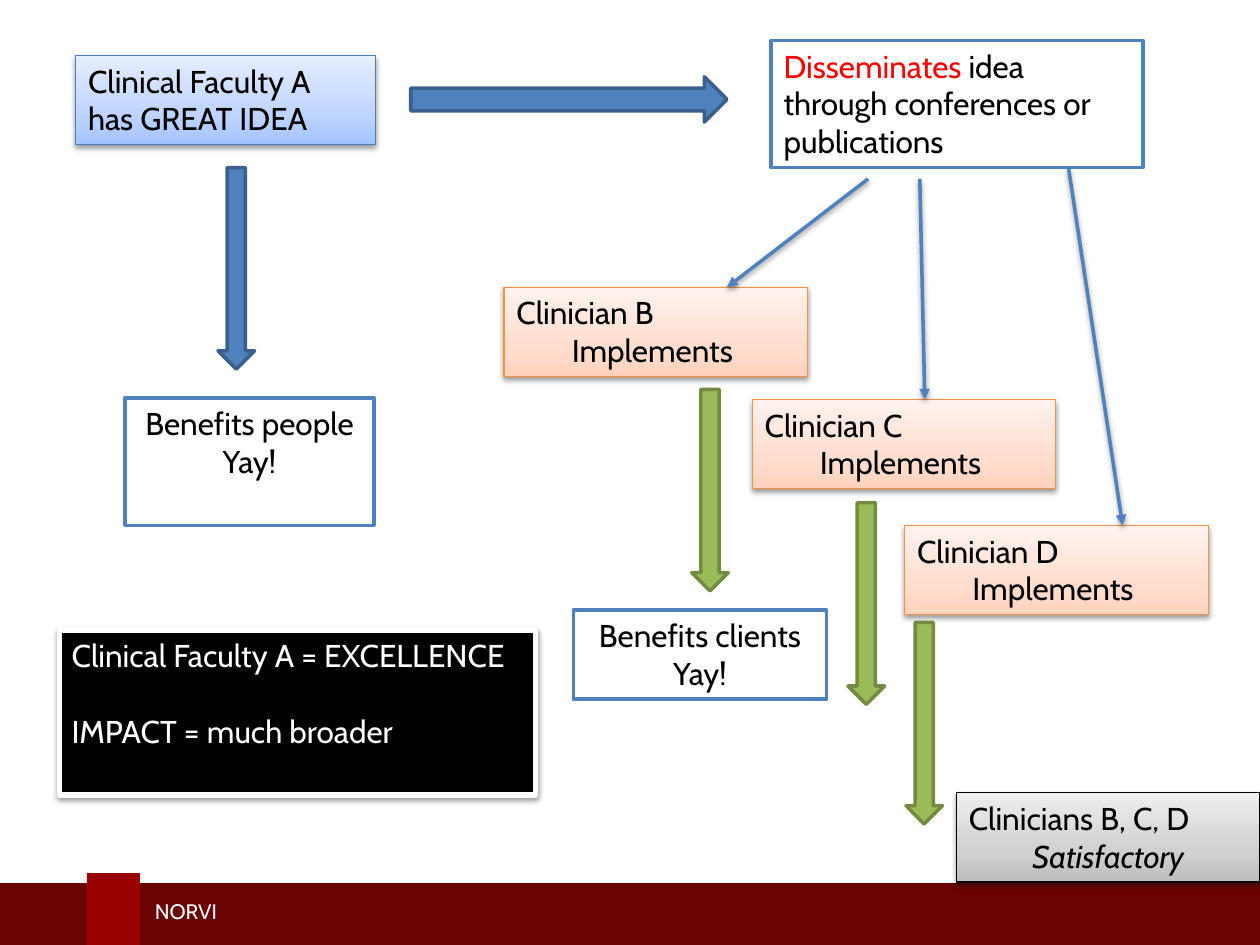
import pptx
import pptx.util
import pptx.dml.color
import pptx.enum.shapes
import pptx.enum.text
import pptx.oxml
import pptx.oxml.ns

Inches, Pt = pptx.util.Inches, pptx.util.Pt
RGB = pptx.dml.color.RGBColor
SHAPE = pptx.enum.shapes.MSO_SHAPE
ALIGN = pptx.enum.text.PP_ALIGN
ANCHOR = pptx.enum.text.MSO_ANCHOR
qn = pptx.oxml.ns.qn
NS = pptx.oxml.ns.nsdecls("a")

FONT = "Cabin"
BLACK, WHITE, RED = RGB(0, 0, 0), RGB(255, 255, 255), RGB(255, 0, 0)
BLUE, NAVY, SKY = RGB(0x4F, 0x81, 0xBD), RGB(0x3A, 0x5F, 0x8C), RGB(0x4B, 0x7E, 0xBC)
GREEN, OLIVE = RGB(0x9B, 0xBB, 0x59), RGB(0x73, 0x8A, 0x42)
ORANGE = RGB(0xF6, 0x92, 0x40)
MAROON, CRIMSON = RGB(0x69, 0x03, 0x04), RGB(0x99, 0, 0)
# Gradient colours from bottom to top
ICE = [RGB(0xA4, 0xC4, 0xFF), RGB(0xBF, 0xD4, 0xFF), RGB(0xE6, 0xEE, 0xFF)]
PEACH = [RGB(0xFF, 0xD2, 0xBD), RGB(0xFF, 0xDE, 0xD0), RGB(0xFF, 0xF2, 0xED)]
GREY = [RGB(0xBD, 0xBD, 0xBD), RGB(0xD1, 0xD1, 0xD1), RGB(0xEE, 0xEE, 0xEE)]


def shade(shape):
    """Give a shape or connector the soft shadow below it."""
    props = shape._element.spPr
    for old in props.findall(qn("a:effectLst")):
        props.remove(old)
    props.append(pptx.oxml.parse_xml(
        f'<a:effectLst {NS}><a:outerShdw blurRad="{Pt(3.1)}" dist="{Pt(1.6)}" '
        'dir="5400000" rotWithShape="0"><a:srgbClr val="000000">'
        '<a:alpha val="38000"/></a:srgbClr></a:outerShdw></a:effectLst>'))


def blend(shape, colors):
    """Fill a shape with a three-colour gradient rising from its base."""
    shape.fill.gradient()
    shape.fill.gradient_angle = 90
    stops = "".join(f'<a:gs pos="{pos}"><a:srgbClr val="{color}"/></a:gs>'
                    for pos, color in zip((0, 35000, 100000), colors))
    grad = shape._element.spPr.find(qn("a:gradFill"))
    grad.replace(grad.find(qn("a:gsLst")),
                 pptx.oxml.parse_xml(f"<a:gsLst {NS}>{stops}</a:gsLst>"))


def add_form(slide, kind, box, fill, line=None, width=2):
    form = slide.shapes.add_shape(kind, *map(Inches, box))
    form.shadow.inherit = False
    if isinstance(fill, list):
        blend(form, fill)
    else:
        form.fill.solid()
        form.fill.fore_color.rgb = fill
    if line is None:
        form.line.fill.background()
    else:
        form.line.color.rgb = line
        form.line.width = Pt(width)
    return form


def write(shape, lines, aligns, color=BLACK, size=18, anchor=ANCHOR.TOP):
    frame = shape.text_frame
    frame.word_wrap = True
    frame.vertical_anchor = anchor
    frame.text = "\n".join(lines)
    for para, align in zip(frame.paragraphs, aligns):
        para.alignment = align
        para.font.name = FONT
        para.font.size = Pt(size)
        para.font.color.rgb = color
    return frame.paragraphs


def add_card(slide, box, lines, fill, line, pad=0.1):
    """Place a shadowed gradient box, its second line centred."""
    card = add_form(slide, SHAPE.RECTANGLE, box, fill, line, 0.75)
    shade(card)
    card.text_frame.margin_right = Inches(pad)
    return write(card, lines, (ALIGN.LEFT, ALIGN.CENTER))


def add_frame(slide, box, lines, align=ALIGN.CENTER):
    """Place a white box with a blue outline."""
    frame = add_form(slide, SHAPE.RECTANGLE, box, WHITE, BLUE)
    return write(frame, lines, [align] * len(lines))


def add_link(slide, start, end):
    link = slide.shapes.add_connector(pptx.enum.shapes.MSO_CONNECTOR.STRAIGHT,
                                      *map(Inches, start + end))
    link.line.color.rgb = BLUE
    link.line.width = Pt(2)
    link.line._get_or_add_ln().append(
        pptx.oxml.parse_xml(f'<a:tailEnd {NS} type="triangle"/>'))
    shade(link)


def add_footer(slide, left, top):
    add_form(slide, SHAPE.RECTANGLE, (left, top, 10.09, 0.5), MAROON)
    add_form(slide, SHAPE.RECTANGLE, (left + 0.72, top - 0.08, 0.42, 0.58), CRIMSON)
    label = slide.shapes.add_textbox(
        *map(Inches, (left + 1.16, top + 0.07, 3.95, 0.3)))
    write(label, ["NORVI"], [ALIGN.LEFT], WHITE, 12, ANCHOR.MIDDLE)


def add_origin(slide, left, top):
    """Place the faculty idea and its direct benefit."""
    add_card(slide, (left, top, 2.38, 0.71),
             ["Clinical Faculty A has GREAT IDEA"], ICE, SKY, 0.15)
    add_form(slide, SHAPE.DOWN_ARROW, (left + 1.13, top + 0.89, 0.29, 1.6), BLUE, NAVY)
    add_frame(slide, (left + 0.39, top + 2.72, 1.98, 1.01), ["Benefits people", "Yay!"])
    add_form(slide, SHAPE.RIGHT_ARROW, (left + 2.66, top + 0.17, 2.51, 0.36), BLUE, NAVY)


def add_spread(slide, left, top):
    """Place the dissemination box and the clinicians it reaches."""
    para, = add_frame(slide, (left, top, 2.95, 1.01), ["Disseminates "], ALIGN.LEFT)
    para.runs[0].font.color.rgb = RED
    para.add_run().text = "idea through conferences or publications"

    # name, card, arrow and link start relative to the box; link end along the card
    steps = (("B", (-2.12, 1.96), (-0.63, 2.77), (0.77, 1.1), 1.77),
             ("C", (-0.15, 2.85), (0.61, 3.67), (1.18, 1.1), 1.37),
             ("D", (1.06, 3.85), (1.07, 4.62), (2.36, 1.01), 1.73))
    for name, *spots, shift in steps:
        card, arrow, start = ((left + x, top + y) for x, y in spots)
        add_card(slide, card + (2.41, 0.71),
                 [f"Clinician {name}", "Implements "], PEACH, ORANGE)
        add_form(slide, SHAPE.DOWN_ARROW, arrow + (0.29, 1.6), GREEN, OLIVE)
        add_link(slide, start, (card[0] + shift, card[1]))
    add_frame(slide, (left - 1.57, top + 4.52, 2.01, 0.71), ["Benefits clients", "Yay!"])


def add_verdict(slide, left, top):
    """Place the ratings of faculty A and of the clinicians."""
    panel = add_form(slide, SHAPE.RECTANGLE, (left, top, 3.78, 1.31), BLACK, WHITE, 3)
    shade(panel)
    paras = write(panel, ["Clinical Faculty A = EXCELLENCE", "IMPACT = much broader"],
                  [ALIGN.LEFT] * 2, WHITE)
    paras[1].space_before = Pt(21.5)
    paras = add_card(slide, (left + 7.12, top + 1.29, 2.41, 0.71),
                     ["Clinicians B, C, D", "Satisfactory"], GREY, BLACK)
    paras[1].font.italic = True


def main():
    deck = pptx.Presentation()
    deck.slide_width, deck.slide_height = Inches(10), Inches(7.5)
    slide = deck.slides.add_slide(deck.slide_layouts[6])
    add_footer(slide, -0.03, 7.01)
    add_origin(slide, 0.6, 0.44)
    add_spread(slide, 6.12, 0.32)
    add_verdict(slide, 0.47, 5)
    deck.save("out.pptx")


if __name__ == "__main__":
    main()
